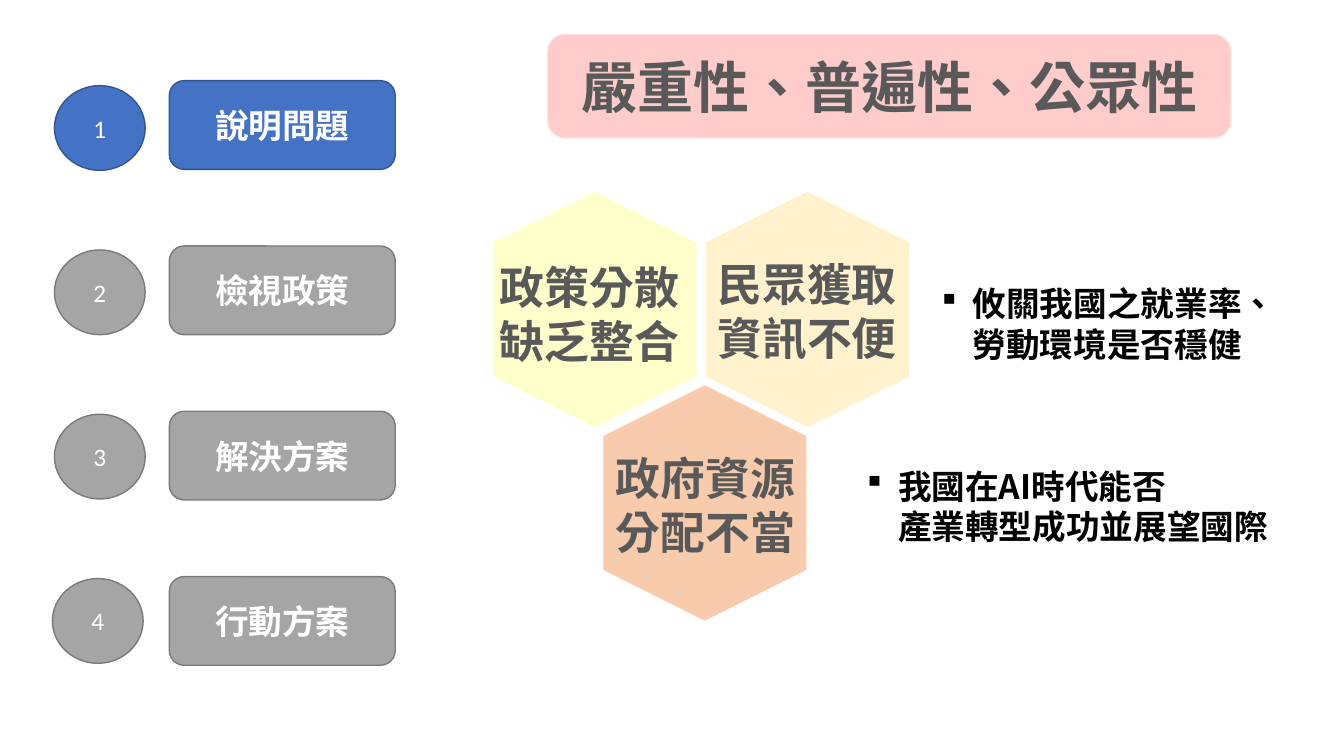
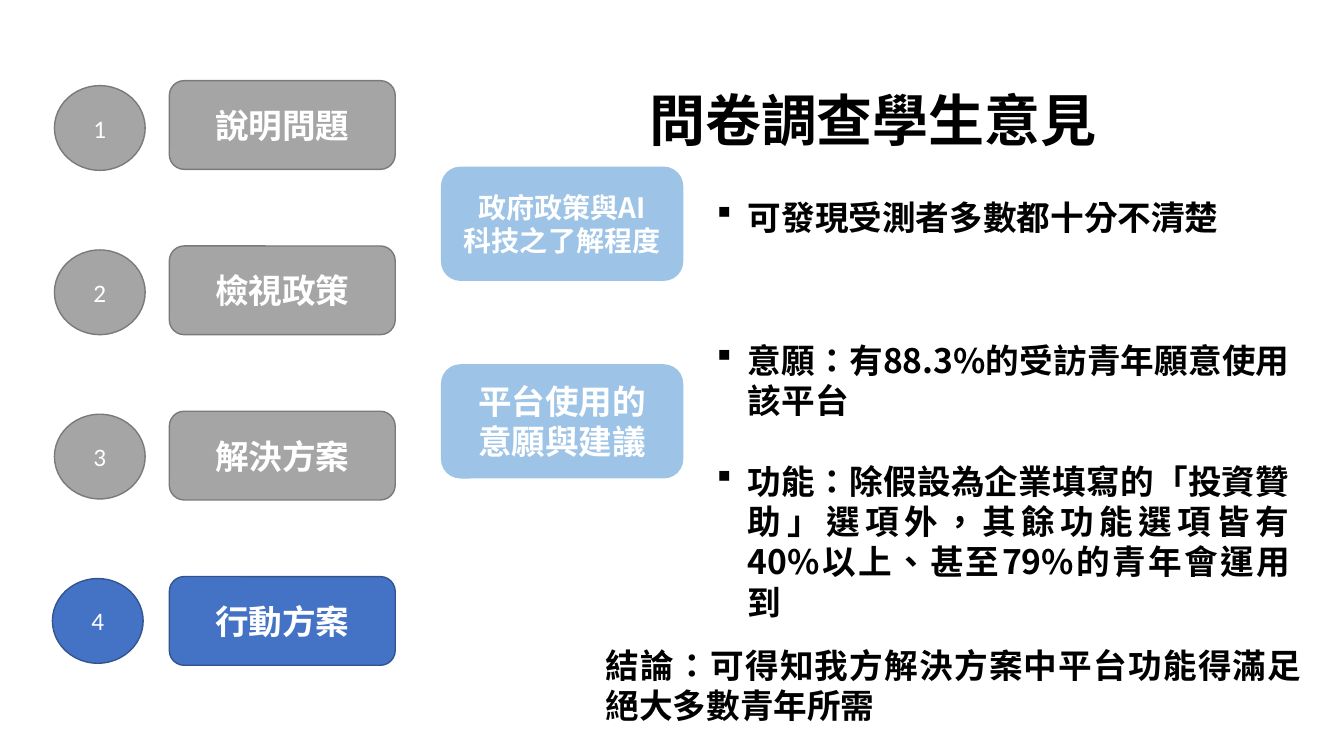
from lxml.etree import SubElement
from pptx import Presentation
from pptx.dml.color import RGBColor
from pptx.enum.shapes import MSO_SHAPE
from pptx.enum.text import MSO_ANCHOR, PP_ALIGN
from pptx.oxml.ns import qn
from pptx.util import Emu, Pt

PX = 9144
CJK = "Noto Sans CJK SC"
LATIN = "Calibri"
WHITE, BLACK, DARK = "FFFFFF", "000000", "595959"
ACTIVE = ("4472C4", "325491")
INACTIVE = ("A5A5A5", "7A7A7A")
SKY = ("9DC3E6", "9DC3E6")
STEPS = ["說明問題", "檢視政策", "解決方案", "行動方案"]
BULLET_INDENT = 31
LINE_HEIGHT = 1.2


def px(length):
    return Emu(length * PX)


def color(value):
    return RGBColor.from_string(value)


def add_run(paragraph, text, size, ink, font=CJK, bold=True):
    run = paragraph.add_run()
    run.text = text
    run.font.size = Pt(size)
    run.font.bold = bold
    run.font.name = font
    run.font.color.rgb = color(ink)
    properties = run.font._element
    properties.set("lang", "zh-TW")
    SubElement(properties, qn("a:ea")).set("typeface", font)


def write_lines(frame, lines, size, ink, align=PP_ALIGN.LEFT, **run_style):
    for index, line in enumerate(lines):
        paragraph = frame.paragraphs[0] if index == 0 else frame.add_paragraph()
        paragraph.alignment = align
        paragraph.line_spacing = Pt(size * LINE_HEIGHT)
        add_run(paragraph, line, size, ink, **run_style)


def indent(paragraph, bullet):
    properties = paragraph._p.get_or_add_pPr()
    properties.set("marL", str(px(BULLET_INDENT)))
    properties.set("indent", str(px(-BULLET_INDENT if bullet else 0)))
    if bullet:
        SubElement(properties, qn("a:buFont")).set("typeface", "Wingdings")
        SubElement(properties, qn("a:buChar")).set("char", "§")


def add_panel(slide, kind, box, colors):
    shape = slide.shapes.add_shape(kind, *map(px, box))
    shape.shadow.inherit = False
    fill, line = colors
    shape.fill.solid()
    shape.fill.fore_color.rgb = color(fill)
    shape.line.color.rgb = color(line)
    shape.line.width = Pt(1)
    return shape


def add_label(slide, kind, box, colors, lines, size, ink=WHITE, **run_style):
    shape = add_panel(slide, kind, box, colors)
    shape.text_frame.vertical_anchor = MSO_ANCHOR.MIDDLE
    write_lines(shape.text_frame, lines, size, ink, PP_ALIGN.CENTER, **run_style)


def add_text(slide, box, lines, size=24, ink=BLACK, align=PP_ALIGN.LEFT):
    frame = slide.shapes.add_textbox(*map(px, box)).text_frame
    frame.word_wrap = True
    write_lines(frame, lines, size, ink, align)
    return frame.paragraphs


def add_steps(slide, current):
    for index, step in enumerate(STEPS):
        colors = ACTIVE if index == current else INACTIVE
        left = 52 if index == len(STEPS) - 1 else 54
        add_label(slide, MSO_SHAPE.FLOWCHART_CONNECTOR,
                  (left, 85 + 163 * index, 90, 84), colors, [str(index + 1)],
                  18, font=LATIN, bold=False)
        add_label(slide, MSO_SHAPE.ROUNDED_RECTANGLE,
                  (168, 80 + 164 * index, 224, 88), colors, [step], 24)


def add_hexagon(slide, left, top, fill):
    add_panel(slide, MSO_SHAPE.HEXAGON, (left, top, 232, 200), (fill, fill)).rotation = 90


def add_slide(presentation, current):
    slide = presentation.slides.add_slide(presentation.slide_layouts[6])
    add_steps(slide, current)
    return slide


def build_problem(presentation):
    slide = add_slide(presentation, 0)
    add_label(slide, MSO_SHAPE.ROUNDED_RECTANGLE, (543, 34, 678, 103),
              ("FFCCCC", "FFE7E7"), ["嚴重性、普遍性、公眾性"], 40, DARK)

    for box, lines in [
        ((924, 276, 357, 91), ["攸關我國之就業率、", "勞動環境是否穩健"]),
        ((850, 457, 447, 91), ["我國在AI時代能否", "產業轉型成功並展望國際"]),
    ]:
        for index, paragraph in enumerate(add_text(slide, box, lines)):
            indent(paragraph, bullet=index == 0)

    for left, top, fill in [(685, 207, "FFF2CC"), (583, 399, "F8CBAD"), (474, 207, "FFFFCC")]:
        add_hexagon(slide, left, top, fill)
    for left, top, lines in [
        (459, 253, ["政策分散", "缺乏整合"]),
        (574, 442, ["政府資源", "分配不當"]),
        (675, 250, ["民眾獲取", "資訊不便"]),
    ]:
        add_text(slide, (left, top, 251, 118), lines, 32, DARK, PP_ALIGN.CENTER)


def build_survey(presentation):
    slide = add_slide(presentation, 3)
    add_text(slide, (634, 80, 544, 77), ["問卷調查學生意見"], 40)

    for top, lines, size in [
        (362, ["平台使用的", "意願與建議"], 24),
        (166, ["政府政策與AI", "科技之了解程度"], 20),
    ]:
        add_label(slide, MSO_SHAPE.ROUNDED_RECTANGLE, (438, top, 239, 112), SKY, lines, size)

    for box, lines in [
        ((701, 190, 558, 50), ["可發現受測者多數都十分不清楚"]),
        ((701, 332, 588, 252), [
            "意願：有88.3%的受訪青年願意使用該平台",
            "功能：除假設為企業填寫的「投資贊助」選項外，其餘功能選項皆有40%以上、甚至79%的青年會運用到",
        ]),
    ]:
        for index, paragraph in enumerate(add_text(slide, box, lines, align=PP_ALIGN.JUSTIFY)):
            if index > 0:
                paragraph.space_before = Pt(24 * LINE_HEIGHT)
            indent(paragraph, bullet=True)

    add_text(slide, (591, 635, 710, 91),
             ["結論：可得知我方解決方案中平台功能得滿足絕大多數青年所需"],
             align=PP_ALIGN.JUSTIFY)


def main():
    presentation = Presentation()
    presentation.slide_width = px(1333)
    presentation.slide_height = px(750)
    build_problem(presentation)
    build_survey(presentation)
    presentation.save("out.pptx")


if __name__ == "__main__":
    main()
